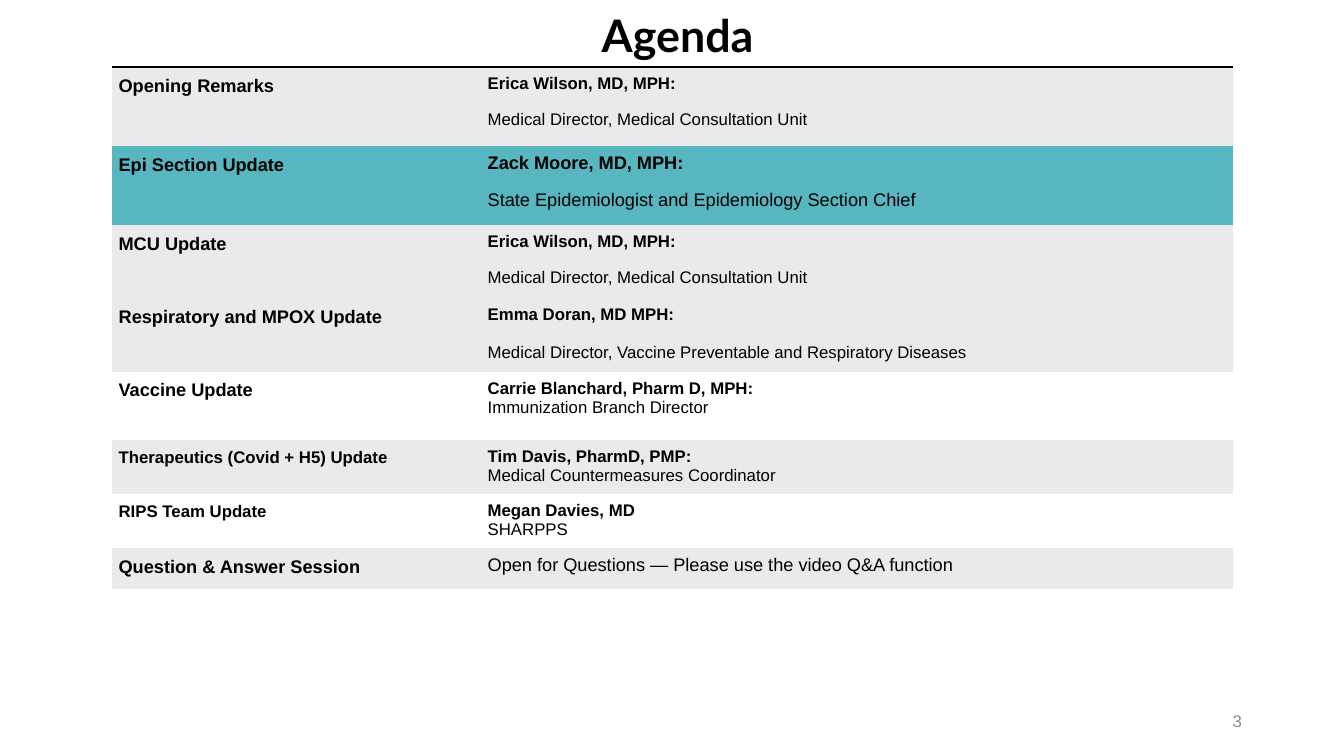
from lxml.etree import SubElement
from pptx import Presentation
from pptx.dml.color import RGBColor as RGB
from pptx.enum.text import MSO_ANCHOR as Anchor, PP_ALIGN as Align
from pptx.oxml.ns import qn
from pptx.util import Cm, Pt

COLORS = {"black": "000000", "gray": "EAEAEA", "teal": "58B6C0", "white": "FFFFFF", "number": "8C8C8C"}
NO_STYLE = "{2D5ABB26-0587-4C30-8999-92F81FD0307C}"
COLUMNS = [9.3, 18.97]
AGENDA = [
    ("Opening Remarks", "Erica Wilson, MD, MPH:", "Medical Director, Medical Consultation Unit", 13, 12, 12, 1.99, "gray"),
    ("Epi Section Update", "Zack Moore, MD, MPH:", "State Epidemiologist and Epidemiology Section Chief", 13, 13, 12, 1.99, "teal"),
    ("MCU Update", "Erica Wilson, MD, MPH:", "Medical Director, Medical Consultation Unit", 13, 12, 12, 1.85, "gray"),
    ("Respiratory and MPOX Update", "Emma Doran, MD MPH:", "Medical Director, Vaccine Preventable and Respiratory Diseases", 13, 12, 13.5, 1.85, "gray"),
    ("Vaccine Update", "Carrie Blanchard, Pharm D, MPH:", "Immunization Branch Director", 13, 12, 0, 1.72, None),
    ("Therapeutics (Covid + H5) Update", "Tim Davis, PharmD, PMP:", "Medical Countermeasures Coordinator", 12, 12, 0, 1.36, "gray"),
    ("RIPS Team Update", "Megan Davies, MD", "SHARPPS", 12, 12, 0, 1.36, "white"),
    ("Question & Answer Session", None, "Open for Questions — Please use the video Q&A function", 13, 13, 0, 1.02, "gray"),
]


def add_run(p, text, size, bold=False, color="black", font="Arial"):
    r = p.add_run()
    r.text = text
    for name, value in {"name": font, "size": Pt(size), "bold": bold}.items():
        setattr(r.font, name, value)
    r.font.color.rgb = RGB.from_string(COLORS[color])


prs = Presentation()
prs.slide_width, prs.slide_height = Cm(33.87), Cm(19.05)
s = prs.slides.add_slide(prs.slide_layouts[5])

title = s.shapes.title
title.left, title.top, title.width, title.height = Cm(14.91), Cm(0.06), Cm(4.37), Cm(1.63)
tf = title.text_frame
for name, value in {"word_wrap": False, "vertical_anchor": Anchor.TOP}.items():
    setattr(tf, name, value)
p = tf.paragraphs[0]
p.alignment = Align.LEFT
add_run(p, "Agenda", 32, True, font="Lato")

frame = s.shapes.add_table(len(AGENDA), 2, Cm(2.81), Cm(1.69), Cm(sum(COLUMNS)), Cm(sum(row[6] for row in AGENDA)))
table = frame.table
table.first_row = table.horz_banding = False
table._tbl.tblPr.find(qn("a:tableStyleId")).text = NO_STYLE
for column, width in zip(table.columns, COLUMNS):
    column.width = Cm(width)

for i, (topic, speaker, role, topic_size, size, gap, height, fill) in enumerate(AGENDA):
    table.rows[i].height = Cm(height)
    topic_cell, speaker_cell = table.cell(i, 0), table.cell(i, 1)
    for cell in (topic_cell, speaker_cell):
        for side in ("left", "right", "top", "bottom"):
            setattr(cell, f"margin_{side}", Cm(0.18))
        if i == 0:
            line = SubElement(cell._tc.get_or_add_tcPr(), qn("a:lnT"), w=str(Pt(2.25)))
            SubElement(SubElement(line, qn("a:solidFill")), qn("a:srgbClr"), val=COLORS["black"])
        if fill:
            cell.fill.solid()
            cell.fill.fore_color.rgb = RGB.from_string(COLORS[fill])
        else:
            cell.fill.background()

    p = topic_cell.text_frame.paragraphs[0]
    p.line_spacing = 1.07
    add_run(p, topic, topic_size, True)

    tf = speaker_cell.text_frame
    p = tf.paragraphs[0]
    if speaker:
        add_run(p, speaker, size, True)
        p = tf.add_paragraph()
        p.space_before = Pt(gap)
    add_run(p, role, size)

sp = s.shapes.add_textbox(Cm(23.93), Cm(17.65), Cm(7.62), Cm(1.02))
tf = sp.text_frame
for name, value in {"word_wrap": True, "vertical_anchor": Anchor.MIDDLE}.items():
    setattr(tf, name, value)
p = tf.paragraphs[0]
p.alignment = Align.RIGHT
add_run(p, "3", 12, color="number")

prs.save("out.pptx")
